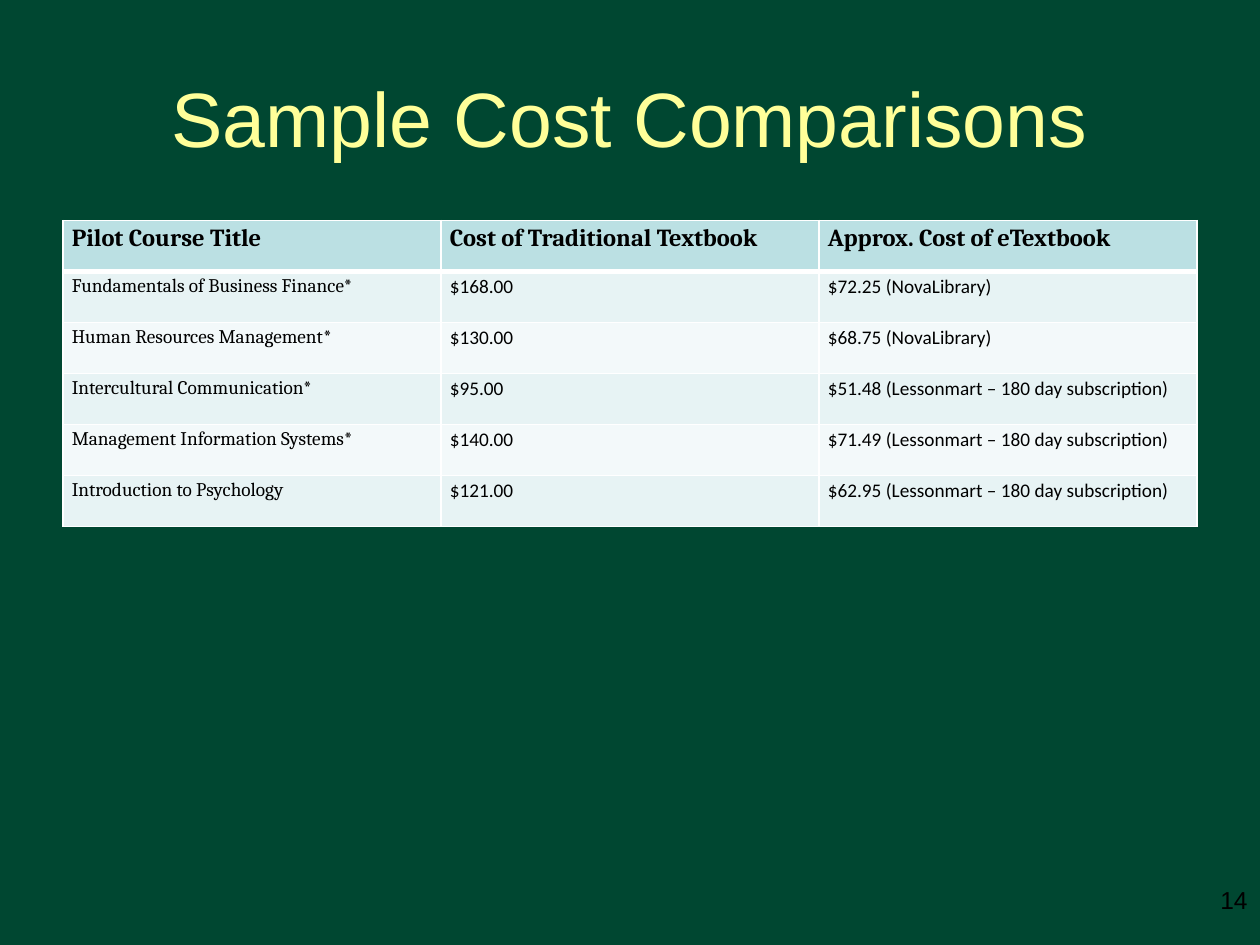
from dataclasses import dataclass

from lxml.etree import SubElement
from pptx import Presentation
from pptx.dml.color import RGBColor
from pptx.enum.text import MSO_ANCHOR, PP_ALIGN
from pptx.oxml.ns import qn
from pptx.util import Inches, Pt

DARK_GREEN = RGBColor(0x00, 0x47, 0x31)
PALE_YELLOW = RGBColor(0xFF, 0xFF, 0x99)
BLACK = RGBColor(0x00, 0x00, 0x00)
WHITE = RGBColor(0xFF, 0xFF, 0xFF)
HEADER_TEAL = RGBColor(0xBB, 0xE0, 0xE3)
BAND_FILLS = (RGBColor(0xE7, 0xF3, 0xF4), RGBColor(0xF3, 0xF9, 0xFA))

WIDTH, HEIGHT = Inches(10), Inches(7.5)
MARGIN = 0.05  # share of the slide's width
ROW_HEIGHT = Inches(0.405)
THIN, THICK = Pt(1), Pt(3)


@dataclass(frozen=True)
class Label:
    """A line of text placed by shares of the slide's size."""
    text: str
    left: float
    top: float
    width: float
    height: float
    size: int
    color: RGBColor
    align: PP_ALIGN
    anchor: MSO_ANCHOR


@dataclass(frozen=True)
class Course:
    title: str
    textbook: str
    etextbook: str

    def cells(self) -> tuple[str, str, str]:
        return self.title, self.textbook, self.etextbook


LABELS = (
    Label("Sample Cost Comparisons", MARGIN, 0.04, 1 - 2 * MARGIN, 1 / 6,
          44, PALE_YELLOW, PP_ALIGN.CENTER, MSO_ANCHOR.MIDDLE),
    Label("14", 0.767, 0.93, 0.233, 0.07,
          14, BLACK, PP_ALIGN.RIGHT, MSO_ANCHOR.TOP),
)

HEADER = Course("Pilot Course Title", "Cost of Traditional Textbook",
                "Approx. Cost of eTextbook")
COURSES = (
    Course("Fundamentals of Business Finance*", "$168.00", "$72.25 (NovaLibrary)"),
    Course("Human Resources Management*", "$130.00", "$68.75 (NovaLibrary)"),
    Course("Intercultural Communication*", "$95.00",
           "$51.48 (Lessonmart – 180 day subscription)"),
    Course("Management Information Systems*", "$140.00",
           "$71.49 (Lessonmart – 180 day subscription)"),
    Course("Introduction to Psychology", "$121.00",
           "$62.95 (Lessonmart – 180 day subscription)"),
)


def write(frame, text: str, align: PP_ALIGN, spacing: float,
          color: RGBColor, **font_format) -> None:
    paragraph = frame.paragraphs[0]
    paragraph.alignment = align
    paragraph.line_spacing = spacing
    run = paragraph.add_run()
    run.text = text
    run.font.color.rgb = color
    for attribute, value in font_format.items():
        setattr(run.font, attribute, value)


def add_label(slide, label: Label) -> None:
    box = slide.shapes.add_textbox(
        int(WIDTH * label.left), int(HEIGHT * label.top),
        int(WIDTH * label.width), int(HEIGHT * label.height))
    frame = box.text_frame
    frame.word_wrap = True
    frame.vertical_anchor = label.anchor
    write(frame, label.text, label.align, 1.0, label.color,
          name="Arial", size=Pt(label.size))


def add_borders(cell, top: int, bottom: int) -> None:
    properties = cell._tc.get_or_add_tcPr()
    for side, width in {"L": THIN, "R": THIN, "T": top, "B": bottom}.items():
        line = SubElement(properties, qn(f"a:ln{side}"), w=str(width))
        fill = SubElement(line, qn("a:solidFill"))
        SubElement(fill, qn("a:srgbClr"), val=str(WHITE))


def fill_cell(cell, text: str, row: int, column: int) -> None:
    is_header = row == 0
    cell_format = {"margin_left": Inches(0.07), "margin_right": Inches(0.07),
                   "margin_top": 0, "margin_bottom": 0}
    for attribute, value in cell_format.items():
        setattr(cell, attribute, value)
    # The heavy rule lies between the header and the first course
    add_borders(cell, THICK if row == 1 else THIN, THICK if is_header else THIN)
    cell.fill.solid()
    cell.fill.fore_color.rgb = HEADER_TEAL if is_header else BAND_FILLS[(row - 1) % 2]
    write(cell.text_frame, text, PP_ALIGN.LEFT, 1.15, BLACK,
          name="Cambria" if is_header or column == 0 else "Calibri",
          size=Pt(14 if is_header else 11), bold=is_header)


def add_cost_table(slide) -> None:
    records = (HEADER, *COURSES)
    costs = slide.shapes.add_table(
        len(records), len(HEADER.cells()), int(WIDTH * MARGIN), Inches(1.75),
        int(WIDTH * (1 - 2 * MARGIN)), ROW_HEIGHT * len(records)).table
    for row, record in enumerate(records):
        for column, text in enumerate(record.cells()):
            fill_cell(costs.cell(row, column), text, row, column)


def main() -> None:
    deck = Presentation()
    deck.slide_width, deck.slide_height = WIDTH, HEIGHT
    slide = deck.slides.add_slide(deck.slide_layouts[6])
    slide.background.fill.solid()
    slide.background.fill.fore_color.rgb = DARK_GREEN

    # Title and page number
    for label in LABELS:
        add_label(slide, label)

    # Cost comparison by course
    add_cost_table(slide)

    deck.save("out.pptx")


if __name__ == "__main__":
    main()
